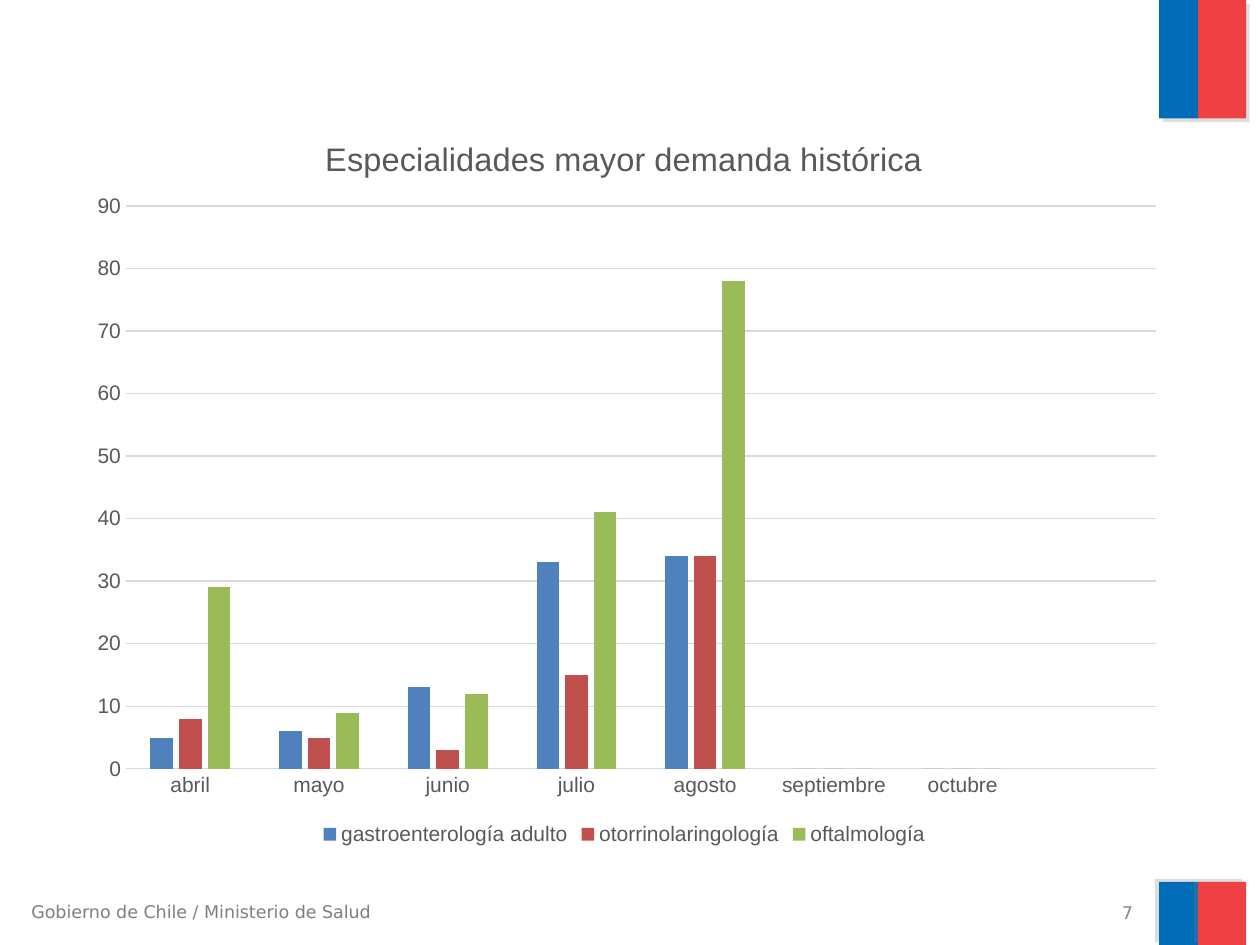
from dataclasses import dataclass

from lxml import etree
from pptx import Presentation
from pptx.chart.data import CategoryChartData
from pptx.dml.color import RGBColor
from pptx.enum.chart import XL_CHART_TYPE, XL_LEGEND_POSITION, XL_TICK_MARK
from pptx.enum.shapes import MSO_SHAPE
from pptx.enum.text import MSO_ANCHOR, PP_ALIGN
from pptx.oxml import parse_xml
from pptx.oxml.ns import nsdecls, qn
from pptx.util import Emu, Pt

PX = 9144
RECTANGLE = MSO_SHAPE.RECTANGLE
COLUMNS = XL_CHART_TYPE.COLUMN_CLUSTERED
LEGEND_BOTTOM = XL_LEGEND_POSITION.BOTTOM
NO_TICK = XL_TICK_MARK.NONE
TOP, MIDDLE = MSO_ANCHOR.TOP, MSO_ANCHOR.MIDDLE
LEFT, RIGHT = PP_ALIGN.LEFT, PP_ALIGN.RIGHT

COLORS = {
    "blue": "006CB7",
    "red": "EF4144",
    "shadow": "808080",
    "footer": "7F7F7F",
    "number": "898989",
    "chart_text": "595959",
    "grid": "D9D9D9",
    "gastro": "4F81BD",
    "otorrino": "C0504D",
    "oftalmo": "9BBB59",
}


@dataclass(frozen=True)
class Box:
    left: int
    top: int
    width: int
    height: int

    def emu(self) -> tuple[Emu, ...]:
        return tuple(Emu(n * PX) for n in (self.left, self.top, self.width, self.height))


@dataclass(frozen=True)
class Band:
    box: Box
    color: str
    shadow_angle: int


@dataclass(frozen=True)
class Label:
    box: Box
    text: str
    color: str
    align: PP_ALIGN
    anchor: MSO_ANCHOR


@dataclass(frozen=True)
class Specialty:
    name: str
    color: str
    demand: tuple[int | None, ...]


BANDS = [
    Band(Box(920, -1, 31, 95), "blue", 45),
    Band(Box(951, 0, 38, 94), "red", 45),
    Band(Box(920, 700, 31, 50), "blue", 215),
    Band(Box(951, 700, 38, 50), "red", 215),
]
LABELS = [
    Label(Box(15, 710, 302, 27), "Gobierno de Chile / Ministerio de Salud", "footer", LEFT, TOP),
    Label(Box(676, 714, 233, 21), "7", "number", RIGHT, MIDDLE),
]
CHART_BOX = Box(56, 87, 879, 588)
CHART_TITLE = "Especialidades mayor demanda histórica"
MONTHS = ["abril", "mayo", "junio", "julio", "agosto", "septiembre", "octubre", ""]
SPECIALTIES = [
    Specialty("gastroenterología adulto", "gastro", (5, 6, 13, 33, 34, 0, 0, None)),
    Specialty("otorrinolaringología", "otorrino", (8, 5, 3, 15, 34, 0, 0, None)),
    Specialty("oftalmología", "oftalmo", (29, 9, 12, 41, 78, 0, 0, None)),
]
PLOT_LAYOUT = {"x": 0.05, "y": 0.13, "w": 0.93, "h": 0.76}


def rgb(color: str) -> RGBColor:
    return RGBColor.from_string(COLORS[color])


def style_font(font, size: float, color: str, family: str) -> None:
    font.size = Pt(size)
    font.bold = False
    font.name = family
    font.color.rgb = rgb(color)


def add_band(slide, band: Band) -> None:
    stripe = slide.shapes.add_shape(RECTANGLE, *band.box.emu())
    stripe.fill.solid()
    stripe.fill.fore_color.rgb = rgb(band.color)
    stripe.line.fill.background()
    stripe.shadow.inherit = False
    effects = stripe.element.spPr.find(qn("a:effectLst"))
    effects.append(parse_xml(
        f'<a:outerShdw {nsdecls("a")} blurRad="0" dist="{Pt(3)}" '
        f'dir="{band.shadow_angle * 60000}" algn="ctr" rotWithShape="0">'
        f'<a:srgbClr val="{COLORS["shadow"]}"><a:alpha val="25000"/></a:srgbClr>'
        '</a:outerShdw>'
    ))


def add_label(slide, label: Label) -> None:
    frame = slide.shapes.add_textbox(*label.box.emu()).text_frame
    frame.word_wrap = True
    frame.vertical_anchor = label.anchor
    frame.text = label.text
    paragraph = frame.paragraphs[0]
    paragraph.alignment = label.align
    style_font(paragraph.runs[0].font, 10, label.color, "DejaVu Sans")


def place_plot(chart) -> None:
    area = chart.element.find(f".//{qn('c:plotArea')}")
    old_layout = area.find(qn("c:layout"))
    if old_layout is not None:
        area.remove(old_layout)
    layout = etree.Element(qn("c:layout"))
    manual = etree.SubElement(layout, qn("c:manualLayout"))
    settings = {"layoutTarget": "inner", "xMode": "edge", "yMode": "edge", **PLOT_LAYOUT}
    for tag, value in settings.items():
        etree.SubElement(manual, qn(f"c:{tag}")).set("val", str(value))
    area.insert(0, layout)


def style_axes(chart) -> None:
    months, demand = chart.category_axis, chart.value_axis
    for axis in (months, demand):
        axis.major_tick_mark = NO_TICK
        axis.minor_tick_mark = NO_TICK
        style_font(axis.tick_labels.font, 12, "chart_text", "Arial")
    demand.minimum_scale, demand.maximum_scale, demand.major_unit = 0, 90, 10
    demand.format.line.fill.background()
    demand.has_major_gridlines = True
    for line in (months.format.line, demand.major_gridlines.format.line):
        line.color.rgb = rgb("grid")
        line.width = Pt(0.75)


def add_demand_chart(slide) -> None:
    data = CategoryChartData()
    data.categories = MONTHS
    for specialty in SPECIALTIES:
        data.add_series(specialty.name, specialty.demand)
    chart = slide.shapes.add_chart(COLUMNS, *CHART_BOX.emu(), data).chart
    style_font(chart.font, 10, "chart_text", "Arial")
    chart.has_title = True
    heading = chart.chart_title.text_frame
    heading.text = CHART_TITLE
    style_font(heading.paragraphs[0].runs[0].font, 18.6, "chart_text", "Arial")
    chart.chart_title.include_in_layout = False
    chart.has_legend = True
    chart.legend.position = LEGEND_BOTTOM
    chart.legend.include_in_layout = False
    style_font(chart.legend.font, 12, "chart_text", "Arial")
    plot = chart.plots[0]
    plot.vary_by_categories = False
    plot.gap_width = 219
    plot.overlap = -27
    for columns, specialty in zip(plot.series, SPECIALTIES):
        columns.format.fill.solid()
        columns.format.fill.fore_color.rgb = rgb(specialty.color)
        columns.invert_if_negative = False
    style_axes(chart)
    place_plot(chart)


def main() -> None:
    deck = Presentation()
    deck.slide_width, deck.slide_height = Emu(1000 * PX), Emu(750 * PX)
    slide = deck.slides.add_slide(deck.slide_layouts[6])
    for band in BANDS:
        add_band(slide, band)
    for label in LABELS:
        add_label(slide, label)
    add_demand_chart(slide)
    deck.save("out.pptx")


if __name__ == "__main__":
    main()
